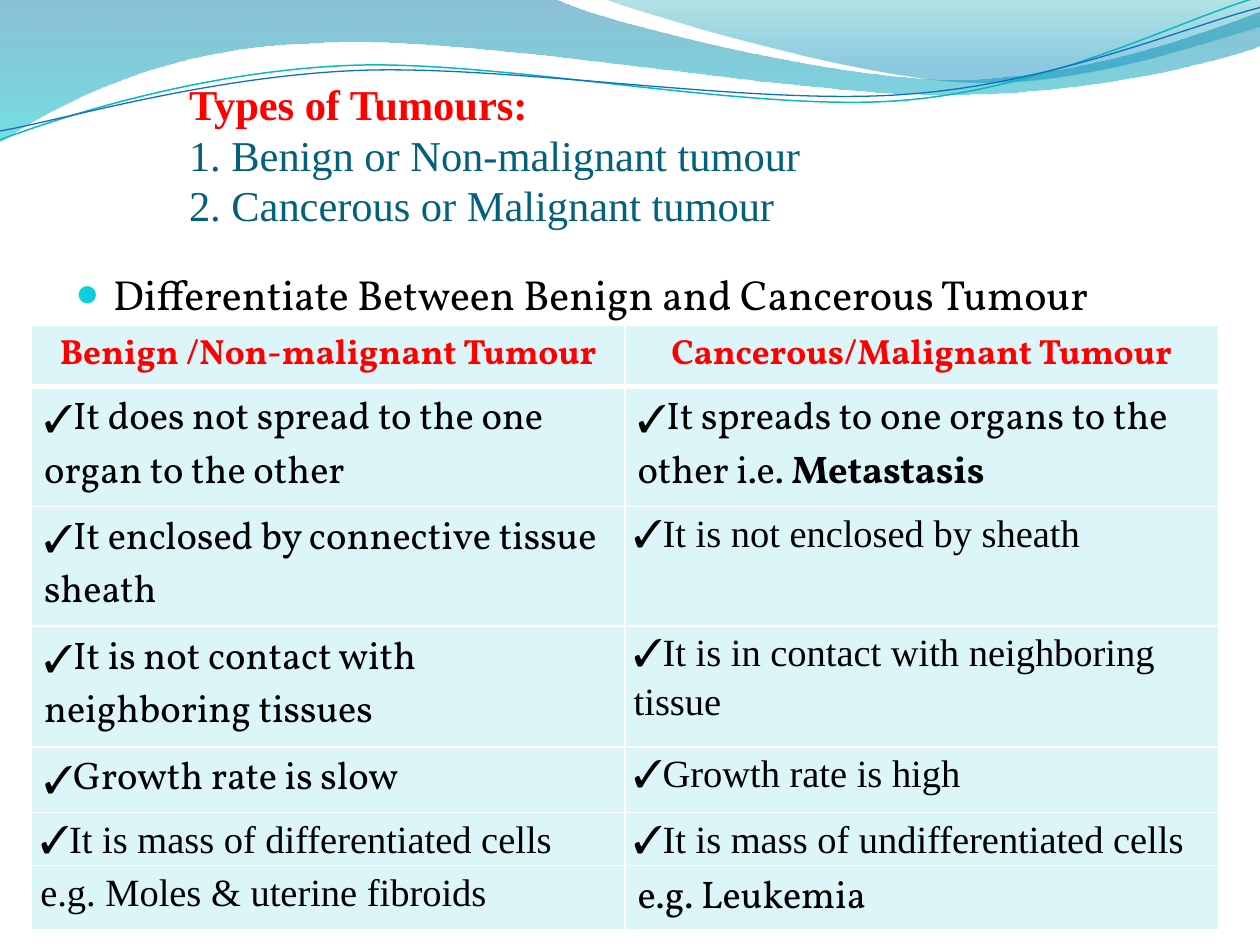
from lxml.etree import SubElement
from pptx import Presentation
from pptx.dml.color import RGBColor
from pptx.enum.text import MSO_ANCHOR, PP_ALIGN
from pptx.oxml import parse_xml
from pptx.oxml.ns import nsdecls, qn
from pptx.util import Inches, Pt

COLORS = {
    "red": "FF0000", "heading": "04617B", "text": "000000", "cell": "DBF5F9",
    "bullet": "0BD0D9", "teal_line": "0AB8BF", "blue_line": "0F6FC6", "border": "FFFFFF",
}
SERIF, BODY = "Times New Roman", "Vollkorn"

# A wave is a list of steps: a pair is a straight step, six numbers a cubic curve.
BACK_WAVE = [
    (0, 0), (4.4, -0.01), (4.76, 0.17, 6.64, 0.63, 7.58, 0.63),
    (8.53, 0.63, 9.58, 0.26, 10, 0.09), (10.01, 0.36),
    (9.83, 0.44, 8.7, 0.76, 7.46, 0.75), (6.22, 0.75, 3.82, 0.28, 2.57, 0.34),
    (1.29, 0.36, 0.46, 0.83, -0.01, 1.13),
]
FRONT_WAVE = [
    (4.79, -0.01), (5.09, 0.11, 6.82, 0.62, 7.69, 0.65),
    (8.56, 0.69, 9.61, 0.32, 10, 0.21), (10, 0),
]
TEAL_CURVE = [
    (0, 1.11), (0.48, 0.93, 1.58, 0.57, 2.77, 0.52),
    (3.95, 0.47, 5.93, 0.89, 7.13, 0.8), (8.33, 0.71, 9.38, 0.15, 9.98, -0.02),
]
BLUE_CURVE = [
    (0, 1.04), (0.47, 0.96, 1.64, 0.61, 2.83, 0.56),
    (4.03, 0.51, 5.97, 0.84, 7.17, 0.75), (8.36, 0.67, 9.41, 0.21, 10, 0.06),
]
HEADERS = ["Benign /Non-malignant Tumour", "Cancerous/Malignant Tumour"]
# Each cell: font, whether it has a check mark, text, bold ending
ROWS = [
    [(BODY, True, "It does not spread to the one organ to the other", ""),
     (BODY, True, "It spreads to one organs to the other i.e. ", "Metastasis")],
    [(BODY, True, "It enclosed by connective tissue sheath", ""),
     (SERIF, True, "It is not enclosed by sheath", "")],
    [(BODY, True, "It is not contact with neighboring tissues", ""),
     (SERIF, True, "It is in contact with neighboring tissue", "")],
    [(BODY, True, "Growth rate is slow", ""),
     (SERIF, True, "Growth rate is high", "")],
    [(SERIF, True, "It is mass of differentiated cells", ""),
     (SERIF, True, "It is mass of undifferentiated cells", "")],
    [(SERIF, False, "e.g. Moles & uterine fibroids", ""),
     (BODY, False, "e.g. Leukemia", "")],
]
ROW_HEIGHTS = [0.49, 0.95, 0.95, 0.96, 0.52, 0.41, 0.51]


class SlideBuilder:
    def __init__(self, slide):
        self.slide = slide

    def format(self, paragraph, font, size, color, bold=False):
        paragraph.font.name = font
        paragraph.font.size = Pt(size)
        paragraph.font.bold = bold
        paragraph.font.color.rgb = RGBColor.from_string(COLORS[color])

    def bullet(self, paragraph, character, indent=0, color=None):
        properties = paragraph._p.get_or_add_pPr()
        properties.set("marL", str(Inches(indent)))
        properties.set("indent", str(-Inches(indent)))
        if color:
            holder = SubElement(properties, qn("a:buClr"))
            SubElement(holder, qn("a:srgbClr"), val=COLORS[color])
            SubElement(properties, qn("a:buSzPct"), val="95000")
        SubElement(properties, qn("a:buFont"), typeface=SERIF)
        SubElement(properties, qn("a:buChar"), char=character)

    def freeform(self, steps, closed):
        """Build an outline through the step ends, then bend its curved steps."""
        ends = [(Inches(step[-2]), Inches(step[-1])) for step in steps]
        builder = self.slide.shapes.build_freeform(*ends[0], scale=1.0)
        builder.add_line_segments(ends[1:], close=closed)
        shape = builder.convert_to_shape()
        shape.shadow.inherit = False
        segments = list(shape.element.iter(qn("a:lnTo")))
        for step, segment in zip(steps[1:], segments):
            if len(step) == 6:
                segment.tag = qn("a:cubicBezTo")
                for i in (0, 2):
                    point = segment.makeelement(qn("a:pt"), {
                        "x": str(Inches(step[i]) - shape.left),
                        "y": str(Inches(step[i + 1]) - shape.top)})
                    segment.insert(i // 2, point)
        return shape

    def wave(self, steps, stops):
        """Draw a filled wave; each stop is position %, colour, opacity %."""
        shape = self.freeform(steps, True)
        shape.line.fill.background()
        stop_xml = "".join(
            f'<a:gs pos="{position * 1000}"><a:srgbClr val="{color}">'
            f'<a:alpha val="{opacity * 1000}"/></a:srgbClr></a:gs>'
            for position, color, opacity in stops)
        gradient = parse_xml(
            f'<a:gradFill {nsdecls("a")}><a:gsLst>{stop_xml}</a:gsLst>'
            '<a:lin ang="5400000" scaled="0"/></a:gradFill>')
        shape.element.spPr.find(qn("a:custGeom")).addnext(gradient)

    def curve(self, steps, color, width):
        shape = self.freeform(steps, False)
        shape.fill.background()
        shape.line.color.rgb = RGBColor.from_string(COLORS[color])
        shape.line.width = Pt(width)

    def title(self, lines):
        title = self.slide.shapes.title
        title.left, title.top = Inches(0.5), Inches(0.5)
        title.width, title.height = Inches(9), Inches(2.08)
        title.element.getparent().append(title.element)
        frame = title.text_frame
        frame.vertical_anchor = MSO_ANCHOR.TOP
        frame.margin_left, frame.margin_top = Inches(1), Inches(0.12)
        frame.text = "\n".join(lines)
        for i, paragraph in enumerate(frame.paragraphs):
            paragraph.alignment = PP_ALIGN.LEFT
            paragraph.line_spacing = Pt(29)
            paragraph.space_before = Pt(0)
            self.format(paragraph, SERIF, 24.3, "heading" if i else "red", i == 0)

    def body(self, text):
        box = self.slide.shapes.add_textbox(
            Inches(0.5), Inches(2.08), Inches(9), Inches(4.83))
        box.text_frame.word_wrap = True
        paragraph = box.text_frame.paragraphs[0]
        paragraph.text = text
        paragraph.space_before = Pt(4.8)
        self.bullet(paragraph, "●", 0.3, "bullet")
        self.format(paragraph, BODY, 24, "text")

    def table(self, headers, rows, heights):
        table = self.slide.shapes.add_table(
            len(heights), len(headers), Inches(0.25), Inches(2.58),
            Inches(9.42), Inches(sum(heights))).table
        for row, height in zip(table.rows, heights):
            row.height = Inches(height)
        for column, text in enumerate(headers):
            cell = table.cell(0, column)
            self.header_borders(cell)
            paragraph = cell.text_frame.paragraphs[0]
            paragraph.text = text
            paragraph.alignment = PP_ALIGN.CENTER
            self.format(paragraph, BODY, 20, "red", True)
        for i, row in enumerate(rows, 1):
            for column, content in enumerate(row):
                self.fill_cell(table.cell(i, column), *content)
        for cell in table.iter_cells():
            cell.fill.solid()
            cell.fill.fore_color.rgb = RGBColor.from_string(COLORS["cell"])

    def header_borders(self, cell):
        properties = cell._tc.get_or_add_tcPr()
        for side, width in (("L", 1), ("R", 1), ("T", 1), ("B", 3)):
            line = SubElement(properties, qn(f"a:ln{side}"), w=str(Pt(width)))
            fill = SubElement(line, qn("a:solidFill"))
            SubElement(fill, qn("a:srgbClr"), val=COLORS["border"])

    def fill_cell(self, cell, font, checked, text, bold_ending):
        paragraph = cell.text_frame.paragraphs[0]
        paragraph.add_run().text = text
        if bold_ending:
            run = paragraph.add_run()
            run.text = bold_ending
            run.font.bold = True
        if font == SERIF:
            cell.margin_left = cell.margin_right = Inches(0.07)
            cell.margin_top = cell.margin_bottom = 0
            paragraph.line_spacing = 1.15
        if checked:
            self.bullet(paragraph, "✓")
        self.format(paragraph, font, 22, "text")


def main():
    presentation = Presentation()
    presentation.slide_width, presentation.slide_height = Inches(10), Inches(7.5)
    builder = SlideBuilder(presentation.slides.add_slide(presentation.slide_layouts[5]))
    builder.wave(BACK_WAVE, [(0, "0074A1", 45), (100, "00C6CF", 55)])
    builder.wave(FRONT_WAVE, [(0, "00A1A9", 30), (80, "008BBF", 45)])
    builder.curve(TEAL_CURVE, "teal_line", 0.85)
    builder.curve(BLUE_CURVE, "blue_line", 0.75)
    builder.title(["Types of Tumours:", "1. Benign or Non-malignant tumour",
                   "2. Cancerous or Malignant tumour"])
    builder.body("Differentiate Between Benign and Cancerous Tumour")
    builder.table(HEADERS, ROWS, ROW_HEIGHTS)
    presentation.save("out.pptx")


if __name__ == "__main__":
    main()
